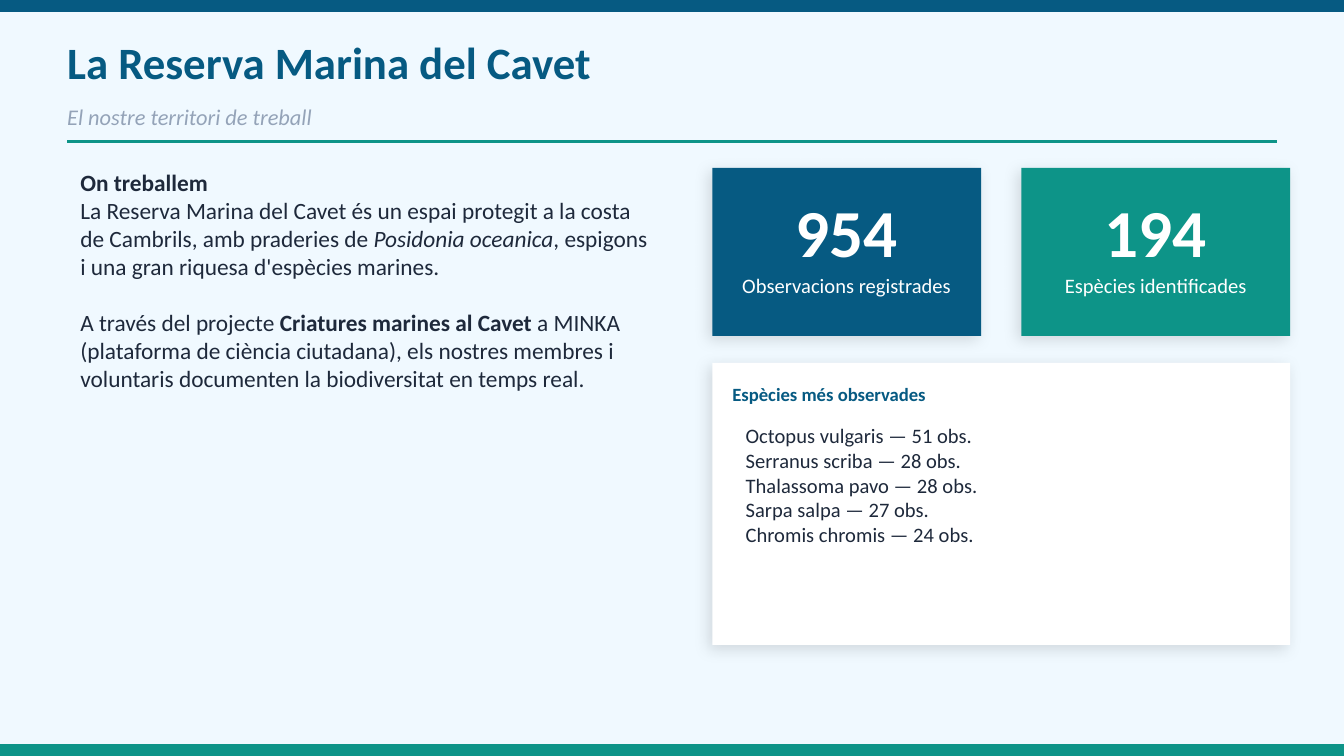
"""Build the slide on the Cavet marine reserve."""
import pptx
import pptx.util
import pptx.dml.color
import pptx.enum.shapes
import pptx.enum.text
import pptx.oxml
import pptx.oxml.ns

Inches = pptx.util.Inches
Pt = pptx.util.Pt
RGBColor = pptx.dml.color.RGBColor
Align = pptx.enum.text.PP_ALIGN
Anchor = pptx.enum.text.MSO_ANCHOR

WIDTH = 10
HEIGHT = WIDTH * 9 / 16
EDGE = 0.08

SKY = RGBColor(0xF0, 0xF9, 0xFF)
BLUE = RGBColor(0x06, 0x5A, 0x82)
TEAL = RGBColor(0x0D, 0x94, 0x88)
GREY = RGBColor(0x94, 0xA3, 0xB8)
INK = RGBColor(0x1E, 0x29, 0x3B)
WHITE = RGBColor(0xFF, 0xFF, 0xFF)

TITLE = "La Reserva Marina del Cavet"
SUBTITLE = "El nostre territori de treball"
BODY = [
    [("On treballem", "b")],
    [
        ("La Reserva Marina del Cavet és un espai protegit a la costa "
         "de Cambrils, amb praderies de ", ""),
        ("Posidonia oceanica", "i"),
        (", espigons i una gran riquesa d'espècies marines.", ""),
    ],
    [
        ("A través del projecte ", ""),
        ("Criatures marines al Cavet", "b"),
        (" a MINKA (plataforma de ciència ciutadana), els nostres membres "
         "i voluntaris documenten la biodiversitat en temps real.", ""),
    ],
]
STATS = [
    ("954", "Observacions registrades", BLUE),
    ("194", "Espècies identificades", TEAL),
]
HEADING = "Espècies més observades"
SPECIES = [
    ("Octopus vulgaris", 51),
    ("Serranus scriba", 28),
    ("Thalassoma pavo", 28),
    ("Sarpa salpa", 27),
    ("Chromis chromis", 24),
]
SHADOW = (
    '<a:outerShdw %s blurRad="%d" dist="%d" dir="8100000" algn="bl" '
    'rotWithShape="0"><a:srgbClr val="000000"><a:alpha val="12000"/>'
    "</a:srgbClr></a:outerShdw>"
) % (pptx.oxml.ns.nsdecls("a"), Pt(8), Pt(3))


def add_rect(slide, box, color):
    """Add a filled rectangle without a line."""
    rect = slide.shapes.add_shape(
        pptx.enum.shapes.MSO_SHAPE.RECTANGLE, *map(Inches, box))
    rect.shadow.inherit = False
    rect.fill.solid()
    rect.fill.fore_color.rgb = color
    rect.line.fill.background()
    return rect


def add_bar(slide, top, color):
    """Add a full-width edge bar."""
    bar = add_rect(slide, (0, top, WIDTH, EDGE), color)
    bar.line.color.rgb = color
    bar.line.width = Pt(1)


def add_card(slide, box, color):
    """Add a rectangle with a soft shadow."""
    card = add_rect(slide, box, color)
    effect = card._element.spPr.find(pptx.oxml.ns.qn("a:effectLst"))
    effect.append(pptx.oxml.parse_xml(SHADOW))


def add_text(slide, box, paras, size, color, align=Align.LEFT,
             anchor=Anchor.MIDDLE, inset=False):
    """Add a text box from lists of (text, style) runs."""
    frame = slide.shapes.add_textbox(*map(Inches, box)).text_frame
    frame.word_wrap = True
    frame.vertical_anchor = anchor
    if not inset:
        frame.margin_left = frame.margin_right = 0
        frame.margin_top = frame.margin_bottom = 0
    for i, runs in enumerate(paras):
        para = frame.add_paragraph() if i else frame.paragraphs[0]
        para.alignment = align
        for text, style in runs:
            run = para.add_run()
            run.text = text
            run.font.name = "Calibri"
            run.font.size = Pt(size)
            run.font.color.rgb = color
            run.font.bold = style == "b"
            run.font.italic = style == "i"
    return frame


def main():
    """Lay out the slide and save it."""
    deck = pptx.Presentation()
    deck.slide_width, deck.slide_height = Inches(WIDTH), Inches(HEIGHT)
    slide = deck.slides.add_slide(deck.slide_layouts[6])
    slide.background.fill.solid()
    slide.background.fill.fore_color.rgb = SKY

    add_bar(slide, 0, BLUE)
    add_bar(slide, HEIGHT - EDGE, TEAL)
    add_text(slide, (0.5, 0.18, 9, 0.55), [[(TITLE, "b")]], 24, BLUE)
    add_text(slide, (0.5, 0.72, 9, 0.3), [[(SUBTITLE, "i")]], 12, GREY)
    rule = slide.shapes.add_connector(
        pptx.enum.shapes.MSO_CONNECTOR.STRAIGHT,
        Inches(0.5), Inches(1.05), Inches(9.5), Inches(1.05))
    rule.line.color.rgb = TEAL
    rule.line.width = Pt(1.5)
    rule._element.spPr.append(pptx.oxml.parse_xml(
        "<a:effectLst %s/>" % pptx.oxml.ns.nsdecls("a")))

    body = add_text(slide, (0.5, 1.2, 4.5, 2.8), BODY, 12.5, INK,
                    anchor=Anchor.TOP, inset=True)
    body.margin_right = Inches(0.15)
    body.paragraphs[-1].space_before = Pt(15.3)

    for i, (count, label, color) in enumerate(STATS):
        left = 5.3 + i * 2.3
        add_card(slide, (left, 1.25, 2, 1.25), color)
        add_text(slide, (left, 1.37, 2, 0.69), [[(count, "b")]], 36, WHITE,
                 Align.CENTER)
        add_text(slide, (left, 2.03, 2, 0.47), [[(label, "")]], 11, WHITE,
                 Align.CENTER, Anchor.TOP)

    add_card(slide, (5.3, 2.7, 4.3, 2.1), WHITE)
    add_text(slide, (5.45, 2.78, 4, 0.3), [[(HEADING, "b")]], 10, BLUE)
    rows = [[(f"{name} — {count} obs.", "")] for name, count in SPECIES]
    add_text(slide, (5.45, 3.1, 4, 1.6), rows, 11, INK,
             anchor=Anchor.TOP, inset=True)
    deck.save("out.pptx")


if __name__ == "__main__":
    main()
